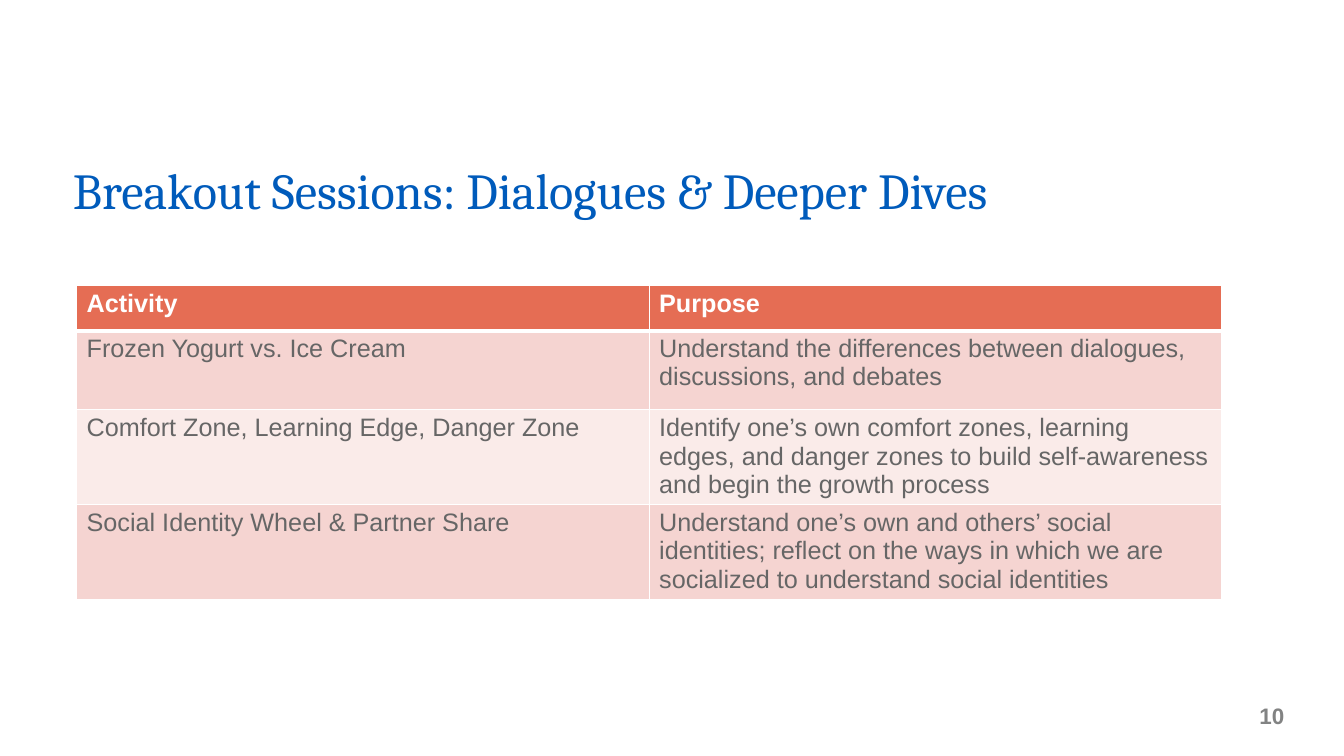
from lxml import etree
from pptx import Presentation
from pptx.dml.color import RGBColor
from pptx.enum.text import MSO_ANCHOR, PP_ALIGN
from pptx.oxml.ns import qn
from pptx.util import Pt

WHITE = RGBColor(0xFF, 0xFF, 0xFF)
BLUE = RGBColor(0x00, 0x5B, 0xBB)
CORAL = RGBColor(0xE5, 0x6D, 0x54)
PINK = RGBColor(0xF5, 0xD4, 0xD1)
PALE_PINK = RGBColor(0xFA, 0xEB, 0xE9)
TEXT_GRAY = RGBColor(0x66, 0x66, 0x66)
NUMBER_GRAY = RGBColor(0x82, 0x83, 0x83)
BOTTOM, MIDDLE = MSO_ANCHOR.BOTTOM, MSO_ANCHOR.MIDDLE
LEFT, RIGHT = PP_ALIGN.LEFT, PP_ALIGN.RIGHT

ROWS = [
    ("Activity", "Purpose"),
    ("Frozen Yogurt vs. Ice Cream",
     "Understand the differences between dialogues, discussions, and debates"),
    ("Comfort Zone, Learning Edge, Danger Zone",
     "Identify one’s own comfort zones, learning edges, and danger zones "
     "to build self-awareness and begin the growth process"),
    ("Social Identity Wheel & Partner Share",
     "Understand one’s own and others’ social identities; reflect on the ways "
     "in which we are socialized to understand social identities"),
]
ROW_HEIGHTS = [32.5, 56.5, 67.3, 67.3]
ROW_FILLS = [CORAL, PINK, PALE_PINK, PINK]


def style_text(para, font_name, size, color, bold=False):
    for span in para.runs:
        span.font.name = font_name
        span.font.size = Pt(size)
        span.font.color.rgb = color
        span.font.bold = bold


def add_border(cell, side, width):
    """Draw a white line on one side (L, R, T or B); call before filling the cell."""
    properties = cell._tc.get_or_add_tcPr()
    line = etree.SubElement(properties, qn(f"a:ln{side}"), w=str(Pt(width)))
    fill = etree.SubElement(line, qn("a:solidFill"))
    etree.SubElement(fill, qn("a:srgbClr"), val=str(WHITE))


deck = Presentation()
deck.slide_width, deck.slide_height = Pt(960), Pt(540)
page = deck.slides.add_slide(deck.slide_layouts[6])
page.background.fill.solid()
page.background.fill.fore_color.rgb = WHITE

title_box = page.shapes.add_textbox(Pt(45), Pt(103.68), Pt(828), Pt(56.16))
number_box = page.shapes.add_textbox(Pt(869.76), Pt(490), Pt(56.88), Pt(41.76))
number_frame = number_box.text_frame
number_frame.margin_left = number_frame.margin_right = Pt(9.36)
number_frame.margin_top = number_frame.margin_bottom = Pt(5.04)

for box, text, anchor, alignment in [
    (title_box, "Breakout Sessions: Dialogues & Deeper Dives", BOTTOM, LEFT),
    (number_box, "10", MIDDLE, RIGHT),
]:
    box.text_frame.word_wrap = True
    box.text_frame.vertical_anchor = anchor
    box.text_frame.text = text
    box.text_frame.paragraphs[0].alignment = alignment

title_para = title_box.text_frame.paragraphs[0]
title_para.line_spacing = 0.8
style_text(title_para, "Cambria", 36, BLUE)
style_text(number_frame.paragraphs[0], "Arial", 16, NUMBER_GRAY, bold=True)

table_frame = page.shapes.add_table(
    len(ROWS), 2, Pt(54.72), Pt(203.76), Pt(817.92), Pt(sum(ROW_HEIGHTS)))
table = table_frame.table
for column in table.columns:
    column.width = Pt(408.96)

for row_index, texts in enumerate(ROWS):
    table.rows[row_index].height = Pt(ROW_HEIGHTS[row_index])
    is_header = row_index == 0
    for column_index, text in enumerate(texts):
        cell = table.cell(row_index, column_index)
        cell.margin_top, cell.margin_bottom = Pt(3), Pt(0)
        add_border(cell, "L", 1)
        add_border(cell, "R", 1)
        add_border(cell, "T", 3 if row_index == 1 else 1)
        add_border(cell, "B", 3 if is_header else 1)
        cell.fill.solid()
        cell.fill.fore_color.rgb = ROW_FILLS[row_index]
        cell.text_frame.text = text
        style_text(cell.text_frame.paragraphs[0], "Arial", 18,
                   WHITE if is_header else TEXT_GRAY, bold=is_header)

deck.save("out.pptx")
